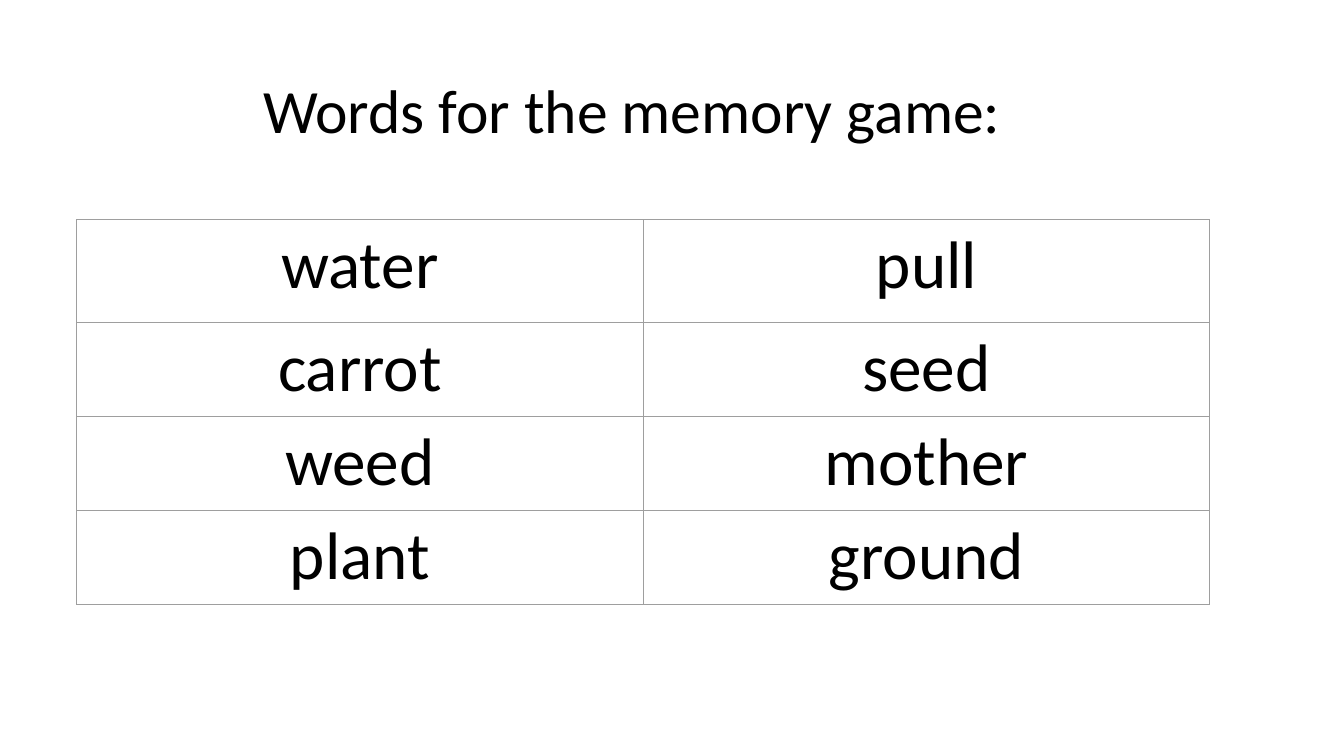
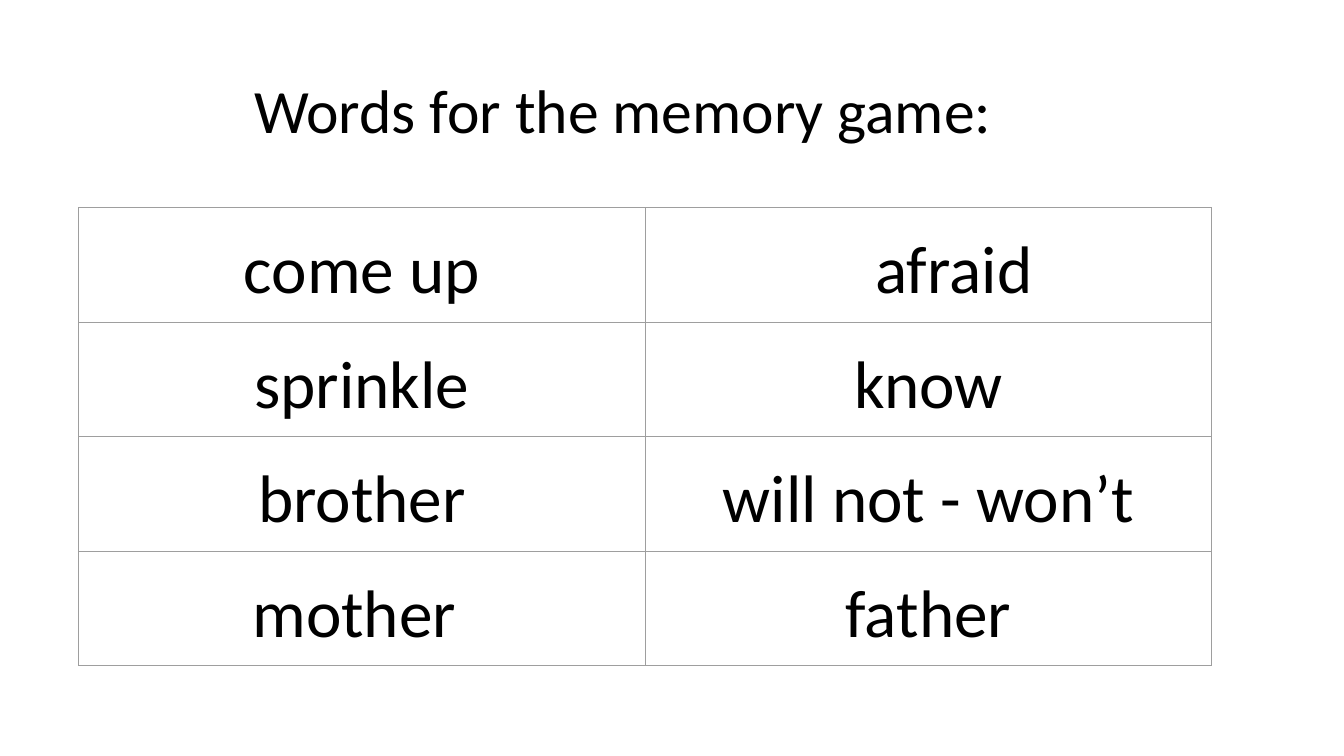
from lxml import etree
from pptx import Presentation
from pptx.dml.color import RGBColor
from pptx.enum.text import MSO_ANCHOR, MSO_AUTO_SIZE, PP_ALIGN
from pptx.oxml.ns import qn
from pptx.util import Inches, Pt

LEFT, CENTER = PP_ALIGN.LEFT, PP_ALIGN.CENTER
TOP, MIDDLE = MSO_ANCHOR.TOP, MSO_ANCHOR.MIDDLE
NO_AUTOFIT = MSO_AUTO_SIZE.NONE

# Content
HEADING = "Words for the memory game:"
WORD_SLIDES = [
    {
        "words": [("water", "pull"), ("carrot", "seed"),
                  ("weed", "mother"), ("plant", "ground")],
        "heading_left": 1.01, "grid_at": (0.76, 2.18),
        "row_heights": (1.02, 0.93, 0.93, 0.93), "line_spacing": 0.9,
    },
    {
        "words": [("come up", "\tafraid"), ("sprinkle", "know"),
                  ("brother", "will not - won’t"), ("mother ", "father")],
        "heading_left": 0.92, "grid_at": (0.78, 2.06),
        "row_heights": (1.13,) * 4, "line_spacing": 1.15,
    },
]

# Shared style
COLORS = {"text": "000000", "border": "9E9E9E", "background": "FFFFFF"}
FONT = "Calibri"
COLUMN_WIDTH = 5.62
CELL_MARGIN = Inches(0.1)
BORDER_WIDTH = Pt(0.75)


def write_text(frame, text, size, align=LEFT, line_spacing=0.9, space_before=0):
    paragraph = frame.paragraphs[0]
    paragraph.alignment = align
    paragraph.line_spacing = line_spacing
    paragraph.space_before = Pt(space_before)
    run = paragraph.add_run()
    run.text = text
    run.font.name = FONT
    run.font.size = Pt(size)
    run.font.color.rgb = RGBColor.from_string(COLORS["text"])
    return paragraph


def add_heading(slide, left):
    heading = slide.shapes.title
    heading.left, heading.top = Inches(left), Inches(0.4)
    heading.width, heading.height = Inches(11.5), Inches(1.45)
    frame = heading.text_frame
    frame.auto_size = NO_AUTOFIT
    frame.vertical_anchor = MIDDLE
    indents = write_text(frame, HEADING, 44)._p.get_or_add_pPr()
    indents.set("marL", str(Inches(1)))
    indents.set("indent", str(Inches(0.5)))


def add_borders(cell):
    properties = cell._tc.get_or_add_tcPr()
    for side in ("a:lnL", "a:lnR", "a:lnT", "a:lnB"):
        line = etree.SubElement(properties, qn(side), w=str(BORDER_WIDTH))
        fill = etree.SubElement(line, qn("a:solidFill"))
        etree.SubElement(fill, qn("a:srgbClr"), val=COLORS["border"])


def add_word_grid(slide, words, at, row_heights, line_spacing):
    left, top = at
    columns = len(words[0])
    grid = slide.shapes.add_table(
        len(words), columns, Inches(left), Inches(top),
        Inches(COLUMN_WIDTH * columns), Inches(sum(row_heights))).table
    grid.first_row = grid.horz_banding = False
    for column in grid.columns:
        column.width = Inches(COLUMN_WIDTH)
    for row, height, row_words in zip(grid.rows, row_heights, words):
        row.height = Inches(height)
        for cell, word in zip(row.cells, row_words):
            cell.margin_left = cell.margin_right = CELL_MARGIN
            cell.margin_top = cell.margin_bottom = CELL_MARGIN
            cell.vertical_anchor = TOP
            add_borders(cell)
            cell.fill.background()
            write_text(cell.text_frame, word, 48, align=CENTER,
                       line_spacing=line_spacing, space_before=10)


def main():
    deck = Presentation()
    deck.slide_width, deck.slide_height = Inches(13.33), Inches(7.5)
    backdrop = deck.slide_master.background.fill
    backdrop.solid()
    backdrop.fore_color.rgb = RGBColor.from_string(COLORS["background"])
    title_only = deck.slide_layouts.get_by_name("Title Only")
    for content in WORD_SLIDES:
        slide = deck.slides.add_slide(title_only)
        add_heading(slide, content["heading_left"])
        add_word_grid(slide, content["words"], content["grid_at"],
                      content["row_heights"], content["line_spacing"])
    deck.save("out.pptx")


if __name__ == "__main__":
    main()
